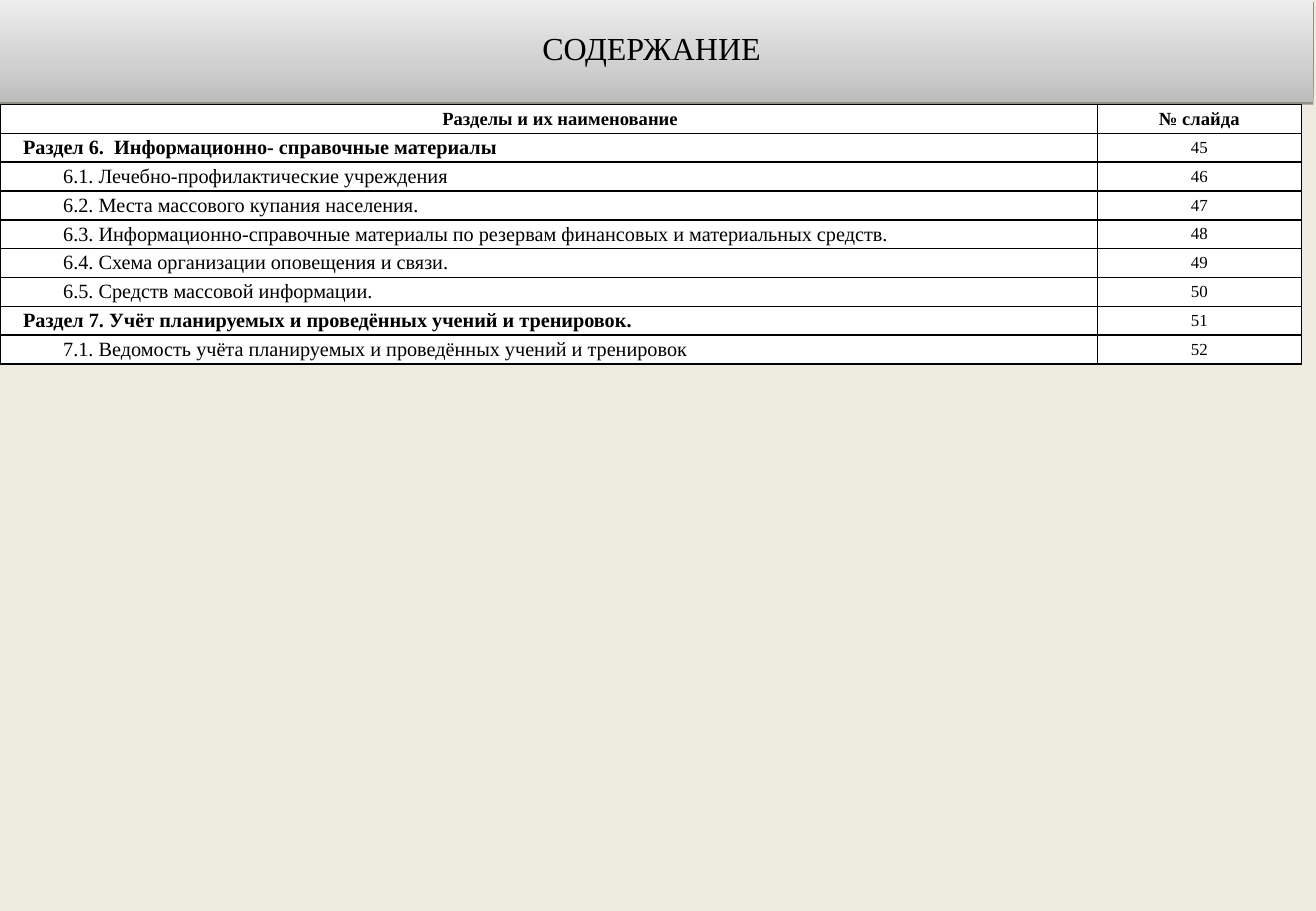
from copy import deepcopy

from lxml.etree import SubElement
from pptx import Presentation
from pptx.dml.color import RGBColor
from pptx.enum.shapes import MSO_SHAPE
from pptx.enum.text import MSO_ANCHOR, PP_ALIGN
from pptx.oxml.ns import qn
from pptx.util import Inches, Pt

FONT = "Times New Roman"
BLACK, WHITE, CREAM = "000000", "FFFFFF", "EEECE1"
BAND_STOPS = [(0, "BCBCBC"), (0.35, "D0D0D0"), (1, "EDEDED")]
SECTION_INDENT, TOPIC_INDENT = 0.19, 0.52
FIRST_SLIDE_NUMBER = 45
HEADINGS = ("Разделы и их наименование", "№ слайда")
CONTENTS = [
    ("Раздел 6.  Информационно- справочные материалы", True),
    ("6.1. Лечебно-профилактические учреждения", False),
    ("6.2. Места массового купания населения.", False),
    ("6.3. Информационно-справочные материалы по резервам финансовых и материальных средств.", False),
    ("6.4. Схема организации оповещения и связи.", False),
    ("6.5. Средств массовой информации.", False),
    ("Раздел 7. Учёт планируемых и проведённых учений и тренировок.", True),
    ("7.1. Ведомость учёта планируемых и проведённых учений и тренировок", False),
]


def rgb(hex_colour):
    """Turn a hex string into a colour."""
    return RGBColor.from_string(hex_colour)


def write(paragraph, text, size, bold=False, align=PP_ALIGN.LEFT):
    """Put one formatted run into a paragraph."""
    paragraph.alignment = align
    run = paragraph.add_run()
    run.text = text
    for name, value in {"name": FONT, "size": Pt(size), "bold": bold}.items():
        setattr(run.font, name, value)
    run.font.color.rgb = rgb(BLACK)


def add_shadow(shape):
    """Give a shape a thin sharp shadow below it."""
    shape.shadow.inherit = False
    effects = shape.element.spPr.find(qn("a:effectLst"))
    shadow = SubElement(effects, qn("a:outerShdw"), blurRad="0", dist=str(Pt(1.6)),
                        dir="5400000", algn="ctr", rotWithShape="0")
    colour = SubElement(shadow, qn("a:srgbClr"), val=BLACK)
    SubElement(colour, qn("a:alpha"), val="38000")


def add_title_band(slide, left, top, width, height):
    """Draw the gradient band with the slide title."""
    band = slide.shapes.add_shape(MSO_SHAPE.RECTANGLE, Inches(left), Inches(top),
                                  Inches(width), Inches(height))
    band.line.fill.background()
    band.fill.gradient()
    band.fill.gradient_angle = 90
    stop_list = band.element.spPr.find(".//" + qn("a:gsLst"))
    stop_list.append(deepcopy(stop_list[0]))
    for stop, (position, colour) in zip(band.fill.gradient_stops, BAND_STOPS):
        stop.position = position
        stop.color.rgb = rgb(colour)
    add_shadow(band)
    frame = band.text_frame
    margins = {"margin_left": 0.07, "margin_right": 0.07, "margin_top": 0.04, "margin_bottom": 0.04}
    for name, value in margins.items():
        setattr(frame, name, Inches(value))
    frame.word_wrap = True
    frame.vertical_anchor = MSO_ANCHOR.MIDDLE
    title = frame.paragraphs[0]
    title.line_spacing = 0.8
    write(title, "СОДЕРЖАНИЕ ", 19, align=PP_ALIGN.CENTER)


def fill_cell(cell, text, size, bold=False, align=PP_ALIGN.CENTER, indent=0):
    """Write a white cell with thin black borders."""
    for side in ("margin_left", "margin_right", "margin_top", "margin_bottom"):
        setattr(cell, side, 0)
    cell.vertical_anchor = MSO_ANCHOR.MIDDLE
    properties = cell._tc.get_or_add_tcPr()
    for edge in ("a:lnL", "a:lnR", "a:lnT", "a:lnB"):
        line = SubElement(properties, qn(edge), w=str(Pt(1)))
        SubElement(SubElement(line, qn("a:solidFill")), qn("a:srgbClr"), val=BLACK)
    cell.fill.solid()
    cell.fill.fore_color.rgb = rgb(WHITE)
    paragraph = cell.text_frame.paragraphs[0]
    write(paragraph, text, size, bold, align)
    paragraph._p.get_or_add_pPr().set("marL", str(Inches(indent)))


def add_contents_table(slide, left, top, width, height, number_width=1.68):
    """Build the table of sections and their slide numbers."""
    row_count = len(CONTENTS) + 1
    table = slide.shapes.add_table(row_count, 2, Inches(left), Inches(top),
                                   Inches(width), Inches(height)).table
    table.first_row = table.horz_banding = False
    for column, column_width in zip(table.columns, (width - number_width, number_width)):
        column.width = Inches(column_width)
    for row in table.rows:
        row.height = Inches(height / row_count)
    for column, (heading, indent) in enumerate(zip(HEADINGS, (SECTION_INDENT, 0))):
        fill_cell(table.cell(0, column), heading, 11, True, indent=indent)
    for row, (entry, is_section) in enumerate(CONTENTS, 1):
        indent = SECTION_INDENT if is_section else TOPIC_INDENT
        fill_cell(table.cell(row, 0), entry, 12, is_section, PP_ALIGN.LEFT, indent)
        fill_cell(table.cell(row, 1), str(FIRST_SLIDE_NUMBER + row - 1), 10)


def main():
    """Build and save the contents slide."""
    deck = Presentation()
    deck.slide_width, deck.slide_height = Inches(10.83), Inches(7.5)
    slide = deck.slides.add_slide(deck.slide_layouts[6])
    slide.background.fill.solid()
    slide.background.fill.fore_color.rgb = rgb(CREAM)
    add_contents_table(slide, 0, 0.86, 10.71, 2.14)
    add_title_band(slide, -0.02, 0, 10.83, 0.84)
    deck.save("out.pptx")


if __name__ == "__main__":
    main()
